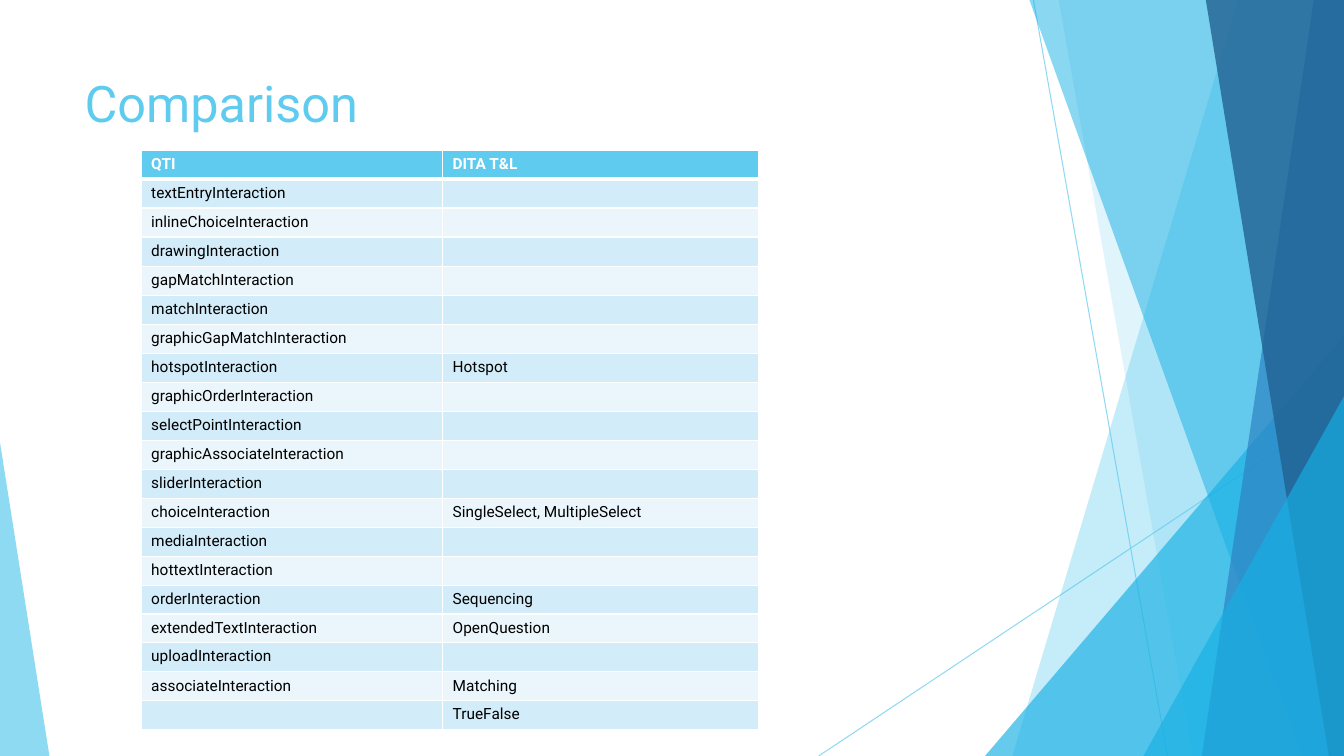
import pptx
import pptx.dml.color
import pptx.enum.shapes
import pptx.enum.text
import pptx.oxml.ns
import pptx.util
from lxml import etree
from pptx.util import Inches

FONT = "Roboto"
COLORS = {
    "sky": "5FCBEF", "cyan": "17B0E4", "blue": "2E83C3", "navy": "226292",
    "white": "FFFFFF", "black": "000000", "band": "D2ECF9", "pale": "EAF6FC",
}
RAYS = [((10.25, 0), (11.58, 7.5)), ((13.33, 4.03), (8.12, 7.5))]
FACETS = [
    ("band", 12.28, 10.04, "sky", 36),
    ("band", 10.5, 11.83, "sky", 20),
    ("triangle", 9.77, 3.33, 3.56, 1, "cyan", 66),
    ("band", 10.21, 12.91, "cyan", 50),
    ("band", 13.03, 11.92, "blue", 70),
    ("band", 11.96, 13.18, "navy", 80),
    ("triangle", 11.34, 3.93, 1.99, 1, "cyan", 66),
    ("triangle", 0, 4.39, 0.49, 0, "sky", 70),
]
INTERACTIONS = [
    ("QTI", "DITA T&L"),
    ("textEntryInteraction", ""),
    ("inlineChoiceInteraction", ""),
    ("drawingInteraction", ""),
    ("gapMatchInteraction", ""),
    ("matchInteraction", ""),
    ("graphicGapMatchInteraction", ""),
    ("hotspotInteraction", "Hotspot"),
    ("graphicOrderInteraction", ""),
    ("selectPointInteraction", ""),
    ("graphicAssociateInteraction", ""),
    ("sliderInteraction", ""),
    ("choiceInteraction", "SingleSelect, MultipleSelect"),
    ("mediaInteraction", ""),
    ("hottextInteraction", ""),
    ("orderInteraction", "Sequencing"),
    ("extendedTextInteraction", "OpenQuestion"),
    ("uploadInteraction", ""),
    ("associateInteraction", "Matching"),
    ("", "TrueFalse"),
]


def rgb(name):
    return pptx.dml.color.RGBColor.from_string(COLORS[name])


def add_child(parent, tag, **attributes):
    return etree.SubElement(parent, pptx.oxml.ns.qn(tag), attributes)


def set_opacity(element, percent):
    color = element.find(".//" + pptx.oxml.ns.qn("a:srgbClr"))
    add_child(color, "a:alpha", val=str(percent * 1000))


def style_text(paragraph, size, color, bold=False):
    for run in paragraph.runs:
        run.font.name = FONT
        run.font.size = pptx.util.Pt(size)
        run.font.bold = bold
        run.font.color.rgb = rgb(color)


def add_ray(slide, start, end):
    ray = slide.shapes.add_connector(
        pptx.enum.shapes.MSO_CONNECTOR.STRAIGHT, *map(Inches, start + end))
    ray.line.color.rgb = rgb("sky")
    ray.line.width = pptx.util.Pt(0.75)
    properties = ray._element.spPr
    set_opacity(properties, 70)
    add_child(properties, "a:effectLst")


def paint_facet(facet, color, opacity):
    facet.shadow.inherit = False
    facet.fill.solid()
    facet.fill.fore_color.rgb = rgb(color)
    facet.line.fill.background()
    set_opacity(facet._element.spPr, opacity)


def add_band(slide, top_left, bottom_left, color, opacity):
    outline = slide.shapes.build_freeform(
        Inches(top_left), Inches(0), scale=1.0)
    corners = [(13.33, 0), (13.33, 7.5), (bottom_left, 7.5)]
    outline.add_line_segments(
        [(Inches(x), Inches(y)) for x, y in corners], close=True)
    paint_facet(outline.convert_to_shape(), color, opacity)


def add_triangle(slide, left, top, width, apex, color, opacity):
    triangle = slide.shapes.add_shape(
        pptx.enum.shapes.MSO_SHAPE.ISOSCELES_TRIANGLE,
        Inches(left), Inches(top), Inches(width), Inches(7.5 - top))
    triangle.adjustments[0] = apex
    paint_facet(triangle, color, opacity)


def add_title(slide, wording):
    title = slide.shapes.title
    title.left, title.top = Inches(0.74), Inches(0.67)
    title.width, title.height = Inches(9.4), Inches(1.44)
    frame = title.text_frame
    frame.text = wording
    frame.auto_size = pptx.enum.text.MSO_AUTO_SIZE.NONE
    frame.vertical_anchor = pptx.enum.text.MSO_ANCHOR.TOP
    frame.paragraphs[0].alignment = pptx.enum.text.PP_ALIGN.LEFT
    style_text(frame.paragraphs[0], 36, "sky")


def set_borders(cell, widths):
    properties = cell._tc.get_or_add_tcPr()
    for side, points in widths.items():
        border = add_child(properties, "a:ln" + side, w=str(pptx.util.Pt(points)))
        fill = add_child(border, "a:solidFill")
        add_child(fill, "a:srgbClr", val=COLORS["white"])


def fill_cell(cell, wording, row):
    header = row == 0
    set_borders(cell, {"L": 1, "R": 1, "T": 3 if row == 1 else 1,
                       "B": 3 if header else 1})
    cell.fill.solid()
    cell.fill.fore_color.rgb = rgb(
        "sky" if header else "band" if row % 2 else "pale")
    cell.text_frame.text = wording
    paragraph = cell.text_frame.paragraphs[0]
    style_text(paragraph, 11, "white" if header else "black", header)
    if not wording:
        add_child(paragraph._p, "a:endParaRPr", sz="1100")


def add_comparison(slide, rows):
    table = slide.shapes.add_table(
        len(rows), 2, Inches(1.4), Inches(1.49), Inches(6.12), Inches(5.67)).table
    for column, width in zip(table.columns, (2.99, 3.13)):
        column.width = Inches(width)
    for row, wordings in enumerate(rows):
        for column, wording in enumerate(wordings):
            fill_cell(table.cell(row, column), wording, row)


def main():
    """Build the comparison slide and save it."""
    deck = pptx.Presentation()
    deck.slide_width, deck.slide_height = Inches(13.33), Inches(7.5)
    slide = deck.slides.add_slide(deck.slide_layouts[5])
    for start, end in RAYS:
        add_ray(slide, start, end)
    builders = {"band": add_band, "triangle": add_triangle}
    for kind, *geometry in FACETS:
        builders[kind](slide, *geometry)
    add_title(slide, "Comparison")
    add_comparison(slide, INTERACTIONS)
    deck.save("out.pptx")


if __name__ == "__main__":
    main()
